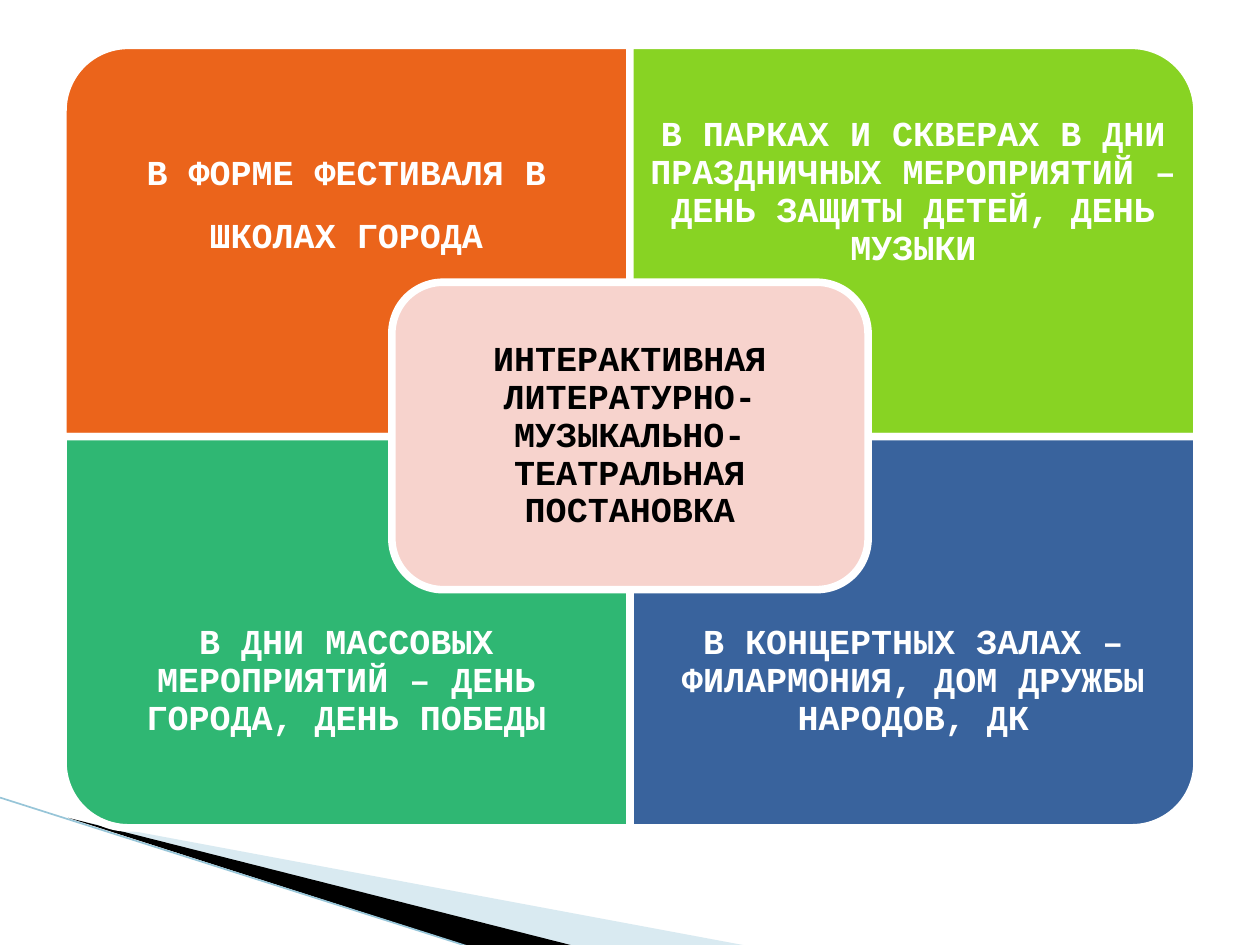
import pptx
import pptx.dml.color
import pptx.enum.shapes
import pptx.enum.text
import pptx.oxml
import pptx.oxml.ns
import pptx.util
from pptx.util import Inches

RGBColor = pptx.dml.color.RGBColor
WHITE = RGBColor(0xFF, 0xFF, 0xFF)
BLACK = RGBColor(0x00, 0x00, 0x00)
ORANGE = RGBColor(0xEB, 0x64, 0x1B)
LIME = RGBColor(0x88, 0xD3, 0x23)
GREEN = RGBColor(0x2F, 0xB7, 0x73)
BLUE = RGBColor(0x39, 0x63, 0x9D)
PINK = RGBColor(0xF7, 0xD3, 0xCD)
PALE_BLUE = RGBColor(0xA0, 0xCB, 0xDC)
EDGE_BLUE = RGBColor(0x97, 0xC5, 0xD8)

SHAPES = pptx.enum.shapes.MSO_SHAPE
FONT = {"name": "Courier New", "size": pptx.util.Pt(20), "bold": True}
PARAGRAPH = {
    "alignment": pptx.enum.text.PP_ALIGN.CENTER,
    "space_after": pptx.util.Pt(7),
}
FRAME = {
    "word_wrap": True,
    "vertical_anchor": pptx.enum.text.MSO_ANCHOR.MIDDLE,
}
MARGINS = ("margin_left", "margin_top", "margin_right", "margin_bottom")

VENUES = [
    ("В ФОРМЕ ФЕСТИВАЛЯ В ШКОЛАХ ГОРОДА", ORANGE, 270, 1.5),
    ("В ПАРКАХ И СКВЕРАХ В ДНИ ПРАЗДНИЧНЫХ МЕРОПРИЯТИЙ – ДЕНЬ ЗАЩИТЫ ДЕТЕЙ, "
     "ДЕНЬ МУЗЫКИ", LIME, 0, 0.9),
    ("В ДНИ МАССОВЫХ МЕРОПРИЯТИЙ – ДЕНЬ ГОРОДА, ДЕНЬ ПОБЕДЫ", GREEN, 180, 0.9),
    ("В КОНЦЕРТНЫХ ЗАЛАХ – ФИЛАРМОНИЯ, ДОМ ДРУЖБЫ НАРОДОВ, ДК", BLUE, 90, 0.9),
]
CENTRE = "ИНТЕРАКТИВНАЯ ЛИТЕРАТУРНО-МУЗЫКАЛЬНО-ТЕАТРАЛЬНАЯ ПОСТАНОВКА"


def apply(target, values):
    for name, value in values.items():
        setattr(target, name, value)


def add_tile(slide, kind, box, fill, rotation=0):
    left, top, width, height = box
    if rotation % 180:
        left, top = left + (width - height) / 2, top + (height - width) / 2
        width, height = height, width
    tile = slide.shapes.add_shape(kind, *map(Inches, (left, top, width, height)))
    tile.rotation = rotation
    tile.shadow.inherit = False
    tile.fill.solid()
    tile.fill.fore_color.rgb = fill
    tile.line.color.rgb = WHITE
    tile.line.width = pptx.util.Pt(4.33)


def add_label(slide, box, text, color, margin, spacing):
    frame = slide.shapes.add_textbox(*map(Inches, box)).text_frame
    apply(frame, FRAME | dict.fromkeys(MARGINS, Inches(margin)))
    paragraph = frame.paragraphs[0]
    apply(paragraph, PARAGRAPH | {"line_spacing": spacing})
    phrase = paragraph.add_run()
    phrase.text = text
    apply(phrase.font, FONT)
    phrase.font.color.rgb = color


def add_venues(slide, box):
    left, top, width, height = box
    tile_width, tile_height = width / 2, height / 2
    label_height = tile_height * 0.75
    for index, (text, fill, rotation, spacing) in enumerate(VENUES):
        row, column = divmod(index, 2)
        x, y = left + column * tile_width, top + row * tile_height
        add_tile(slide, SHAPES.ROUND_1_RECTANGLE,
                 (x, y, tile_width, tile_height), fill, rotation)
        label_top = y + row * (tile_height - label_height)
        add_label(slide, (x, label_top, tile_width, label_height),
                  text, WHITE, 0.16, spacing)


def add_centre(slide, box):
    left, top, width, height = box
    inset = 0.12
    add_tile(slide, SHAPES.ROUNDED_RECTANGLE, box, PINK)
    add_label(slide, (left + inset, top + inset, width - 2 * inset, height - 2 * inset),
              CENTRE, BLACK, 0.08, 0.9)


def add_ray(slide, points, fill):
    start, *rest = [tuple(map(Inches, point)) for point in points]
    builder = slide.shapes.build_freeform(*start)
    builder.add_line_segments(rest, close=True)
    ray = builder.convert_to_shape()
    ray.shadow.inherit = False
    ray.fill.solid()
    ray.fill.fore_color.rgb = fill
    ray.line.fill.background()
    return ray


def add_corner_rays(slide, box):
    left, top, width, height = box
    right, bottom = left + width, top + height
    tip_x, tip_y = left + 0.54, top + 0.17
    pale = add_ray(slide, [(tip_x, tip_y), (right, bottom), (4.56, bottom)], PALE_BLUE)
    color = pale.fill._xPr.find(".//" + pptx.oxml.ns.qn("a:srgbClr"))
    color.append(pptx.oxml.parse_xml(
        f'<a:alpha {pptx.oxml.ns.nsdecls("a")} val="40000"/>'))
    add_ray(slide, [(tip_x, tip_y - 0.01), (4.57, bottom), (3.72, bottom)], BLACK)
    edge = slide.shapes.add_connector(
        pptx.enum.shapes.MSO_CONNECTOR.STRAIGHT,
        *map(Inches, (left, top, 3.71, bottom)))
    edge.line.color.rgb = EDGE_BLUE
    edge.line.width = pptx.util.Pt(0.95)
    edge._element.spPr.append(pptx.oxml.parse_xml(
        f'<a:effectLst {pptx.oxml.ns.nsdecls("a")}/>'))


def main():
    deck = pptx.Presentation()
    deck.slide_width, deck.slide_height = Inches(10), Inches(7.5)
    slide = deck.slides.add_slide(deck.slide_layouts[6])
    slide.background.fill.solid()
    slide.background.fill.fore_color.rgb = WHITE
    add_corner_rays(slide, (0, 6.33, 5.95, 1.18))
    add_venues(slide, (0.5, 0.36, 9, 6.21))
    add_centre(slide, (3.11, 2.24, 3.78, 2.44))
    deck.save("out.pptx")


if __name__ == "__main__":
    main()
